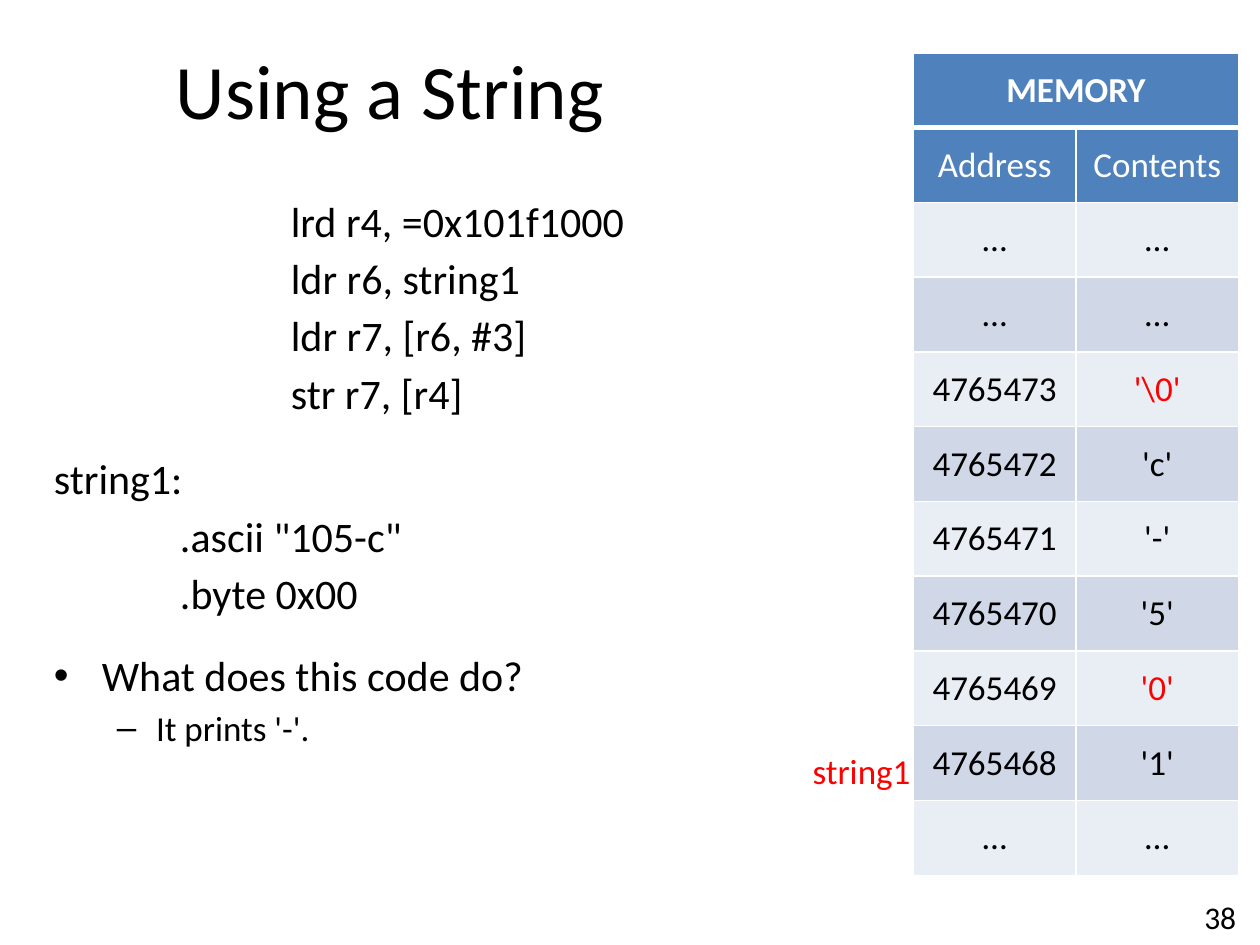
"""Build the slide on using a string in memory."""
from pptx import Presentation, util as u
from pptx.dml.color import RGBColor
from pptx.enum import text
from pptx.oxml import parse_xml
from pptx.oxml.ns import nsdecls

HUES = {"ink": "000000", "white": "FFFFFF", "red": "FF0000",
        "head": "4F81BD", "light": "E9EDF4", "dark": "D0D8E8"}
FONT = "Calibri"

# Text, size, left margin, first indent, space before, bullet
CODE = [
    ("lrd r4, =0x101f1000", 24, 1.88, 0, 4, None),
    ("ldr r6, string1", 24, 1.88, 0, 4, None),
    ("ldr r7, [r6, #3]", 24, 1.88, 0, 4, None),
    ("str r7, [r4]", 24, 1.88, 0, 4, None),
    ("string1:", 24, 0, 0, 20, None),
    (".ascii \"105-c\"", 24, 1, 0, 4, None),
    (".byte 0x00", 24, 1, 0, 4, None),
    ("What does this code do?", 24, 0.38, -0.38, 18, "•"),
    ("It prints '-'.", 20, 0.81, -0.31, 4, "–"),
]
BYTES = ["'\\0'", "'c'", "'-'", "'5'", "'0'", "'1'"]
REDS = ("'\\0'", "'0'")
TOP = 4765473


def add_run(para, words, size, hue="ink", bold=False):
    """Add one styled run to a paragraph."""
    run = para.add_run()
    run.text = words
    font = run.font
    font.name, font.size, font.bold = FONT, u.Pt(size), bold
    font.color.rgb = RGBColor.from_string(HUES[hue])


def add_box(slide, left, top, width, height, wrap=True):
    """Add an empty text box and return its frame."""
    box = slide.shapes.add_textbox(*map(u.Inches, (left, top, width, height)))
    box.text_frame.word_wrap = wrap
    return box.text_frame


def add_label(slide, place, words, size, hue="ink", align=None, wrap=True):
    """Add a text box with a single line and return its frame."""
    frame = add_box(slide, *place, wrap=wrap)
    para = frame.paragraphs[0]
    para.alignment = align
    add_run(para, words, size, hue)
    return frame


def add_code(slide):
    """Add the listing and the question below it."""
    frame = add_box(slide, 0.33, 1.5, 6.51, 5.5)
    for row, (words, size, left, first, gap, mark) in enumerate(CODE):
        para = frame.add_paragraph() if row else frame.paragraphs[0]
        para.space_before = u.Pt(gap)
        props = para._p.get_or_add_pPr()
        props.set("marL", str(u.Inches(left)))
        props.set("indent", str(u.Inches(first)))
        if mark:
            props.append(parse_xml(
                f'<a:buFont {nsdecls("a")} typeface="Arial"/>'))
            props.append(parse_xml(
                f'<a:buChar {nsdecls("a")} char="{mark}"/>'))
        add_run(para, words, size)


def set_edge(cell, side, width):
    """Draw a white line on one side of a cell."""
    cell._tc.get_or_add_tcPr().append(parse_xml(
        f'<a:ln{side} {nsdecls("a")} w="{u.Pt(width)}"><a:solidFill>'
        f'<a:srgbClr val="{HUES["white"]}"/></a:solidFill></a:ln{side}>'))


def fill_cell(cell, words, row):
    """Style one table cell by its row and add its text."""
    for side in "LRTB":
        thick = (row, side) in ((0, "B"), (1, "T"))
        set_edge(cell, side, 3 if thick else 1)
    back = "head" if row < 2 else ("dark" if row % 2 else "light")
    cell.fill.solid()
    cell.fill.fore_color.rgb = RGBColor.from_string(HUES[back])
    cell.vertical_anchor = text.MSO_ANCHOR.MIDDLE
    para = cell.text_frame.paragraphs[0]
    para.alignment = text.PP_ALIGN.CENTER
    hue = "white" if row < 2 else ("red" if words in REDS else "ink")
    if words:
        add_run(para, words, 20, hue, bold=row == 0)


def add_grid(slide):
    """Add the memory table."""
    dots = ("…", "…")
    cells = [(str(TOP - step), byte) for step, byte in enumerate(BYTES)]
    rows = [("MEMORY", ""), ("Address", "Contents"), dots, dots, *cells, dots]
    grid = slide.shapes.add_table(
        len(rows), 2, *map(u.Inches, (7.25, 0.42, 2.58, 6.53))).table
    for row, pair in enumerate(rows):
        for col, words in enumerate(pair):
            fill_cell(grid.cell(row, col), words, row)
    grid.cell(0, 0).merge(grid.cell(0, 1))


def main():
    """Build and save the slide."""
    deck = Presentation()
    deck.slide_width, deck.slide_height = u.Inches(10), u.Inches(7.5)
    slide = deck.slides.add_slide(deck.slide_layouts[6])
    title = add_label(slide, (0.5, 0.08, 5.33, 1.25), "Using a String ", 44,
                      align=text.PP_ALIGN.CENTER)
    title.vertical_anchor = text.MSO_ANCHOR.MIDDLE
    add_code(slide)
    add_label(slide, (7.58, 7.08, 2.33, 0.4), "38", 18,
              align=text.PP_ALIGN.RIGHT)
    add_grid(slide)
    add_label(slide, (6.35, 5.9, 0.99, 0.44), "string1", 20, "red", wrap=False)
    deck.save("out.pptx")


if __name__ == "__main__":
    main()
